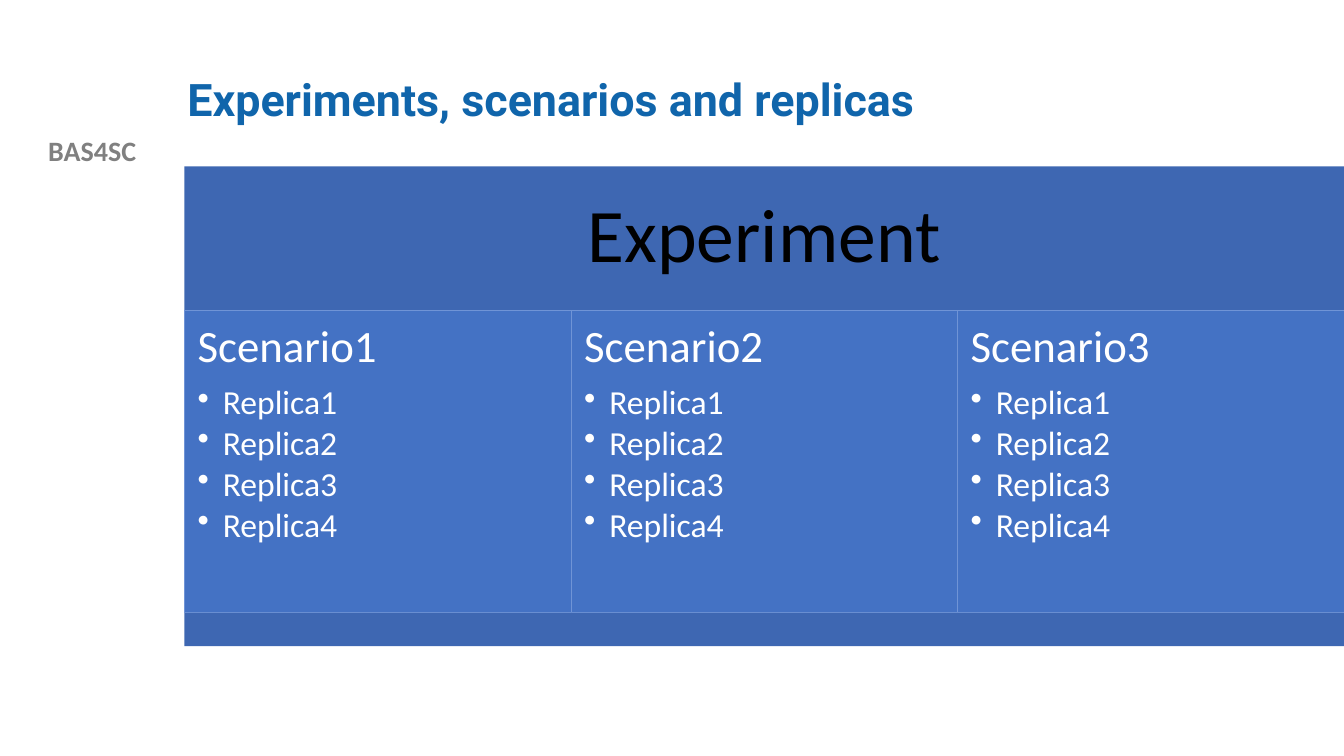
from pptx import Presentation
from pptx.dml.color import RGBColor as Color
from pptx.enum.shapes import MSO_SHAPE as Shape
from pptx.enum.text import MSO_ANCHOR as Anchor, PP_ALIGN as Align
from pptx.oxml import parse_xml
from pptx.oxml.ns import nsdecls
from pptx.util import Inches, Pt

COLORS = {
    "title": "1065AB",
    "label": "808080",
    "band": "3E67B2",
    "panel": "4472C4",
    "edge": "7094D6",
    "dark": "000000",
    "light": "FFFFFF",
}

# Diagram grid: equal columns under a header, closed by a footer strip
WIDTH, HEIGHT = 13.33, 7.5
LEFT, TOP = 1.83, 1.65
HEADER_ROW, PANEL_ROW, FOOTER_ROW = 1.43, 3, 0.33
SCENARIOS, REPLICAS = 3, 4
COLUMN = (WIDTH - LEFT) / SCENARIOS


def color(name):
    return Color.from_string(COLORS[name])


def set_frame(shape, margin_x, margin_y, anchor):
    frame = shape.text_frame
    frame.word_wrap = True
    frame.margin_left = frame.margin_right = Inches(margin_x)
    frame.margin_top = frame.margin_bottom = Inches(margin_y)
    frame.vertical_anchor = anchor
    return frame


def style(paragraph, text, size, color_name, font="Calibri", bold=False,
          align=Align.LEFT, spacing=0.9, after=0):
    paragraph.text = text
    paragraph.alignment = align
    paragraph.line_spacing = spacing
    paragraph.space_after = Pt(after)
    paragraph.font.name = font
    paragraph.font.size = Pt(size)
    paragraph.font.bold = bold
    paragraph.font.color.rgb = color(color_name)


def add_bullet(paragraph):
    properties = paragraph._p.get_or_add_pPr()
    properties.set("marL", str(Inches(0.25)))
    properties.set("indent", str(Inches(-0.25)))
    properties.append(parse_xml(f'<a:buChar {nsdecls("a")} char="•"/>'))


def add_text(slide, box, anchor, text, size, color_name, **options):
    shape = slide.shapes.add_textbox(*map(Inches, box))
    frame = set_frame(shape, 0.1, 0.05, anchor)
    style(frame.paragraphs[0], text, size, color_name, bold=True, **options)


def add_block(slide, box, fill, edge=None):
    shape = slide.shapes.add_shape(Shape.RECTANGLE, *map(Inches, box))
    shape.shadow.inherit = False
    shape.fill.solid()
    shape.fill.fore_color.rgb = color(fill)
    if edge:
        shape.line.color.rgb = color(edge)
        shape.line.width = Pt(0.5)
    else:
        shape.line.fill.background()
    return shape


def add_scenario(slide, index):
    box = (LEFT + index * COLUMN, TOP + HEADER_ROW, COLUMN, PANEL_ROW)
    panel = add_block(slide, box, "panel", "edge")
    frame = set_frame(panel, 0.13, 0.13, Anchor.TOP)
    style(frame.paragraphs[0], f"Scenario{index + 1}", 32, "light", after=10)
    for number in range(1, REPLICAS + 1):
        paragraph = frame.add_paragraph()
        paragraph.level = 1
        add_bullet(paragraph)
        style(paragraph, f"Replica{number}", 24, "light", after=3.2)


def main():
    presentation = Presentation()
    presentation.slide_width = Inches(WIDTH)
    presentation.slide_height = Inches(HEIGHT)
    slide = presentation.slides.add_slide(presentation.slide_layouts[6])

    # Side label and title
    add_text(slide, (0, 1.28, LEFT, 0.43), Anchor.TOP, "BAS4SC", 20, "label",
             align=Align.CENTER, spacing=1.0)
    add_text(slide, (1.76, 0.4, 10.66, 1.22), Anchor.MIDDLE,
             "Experiments, scenarios and replicas", 32, "title", font="Roboto")

    # Experiment header
    header = add_block(slide, (LEFT, TOP, WIDTH - LEFT, HEADER_ROW), "band")
    frame = set_frame(header, 0.23, 0.23, Anchor.MIDDLE)
    style(frame.paragraphs[0], "Experiment", 54, "dark", align=Align.CENTER)

    # Scenario columns
    for index in range(SCENARIOS):
        add_scenario(slide, index)

    # Footer strip
    footer_top = TOP + HEADER_ROW + PANEL_ROW
    add_block(slide, (LEFT, footer_top, WIDTH - LEFT, FOOTER_ROW), "band")

    presentation.save("out.pptx")


if __name__ == "__main__":
    main()
